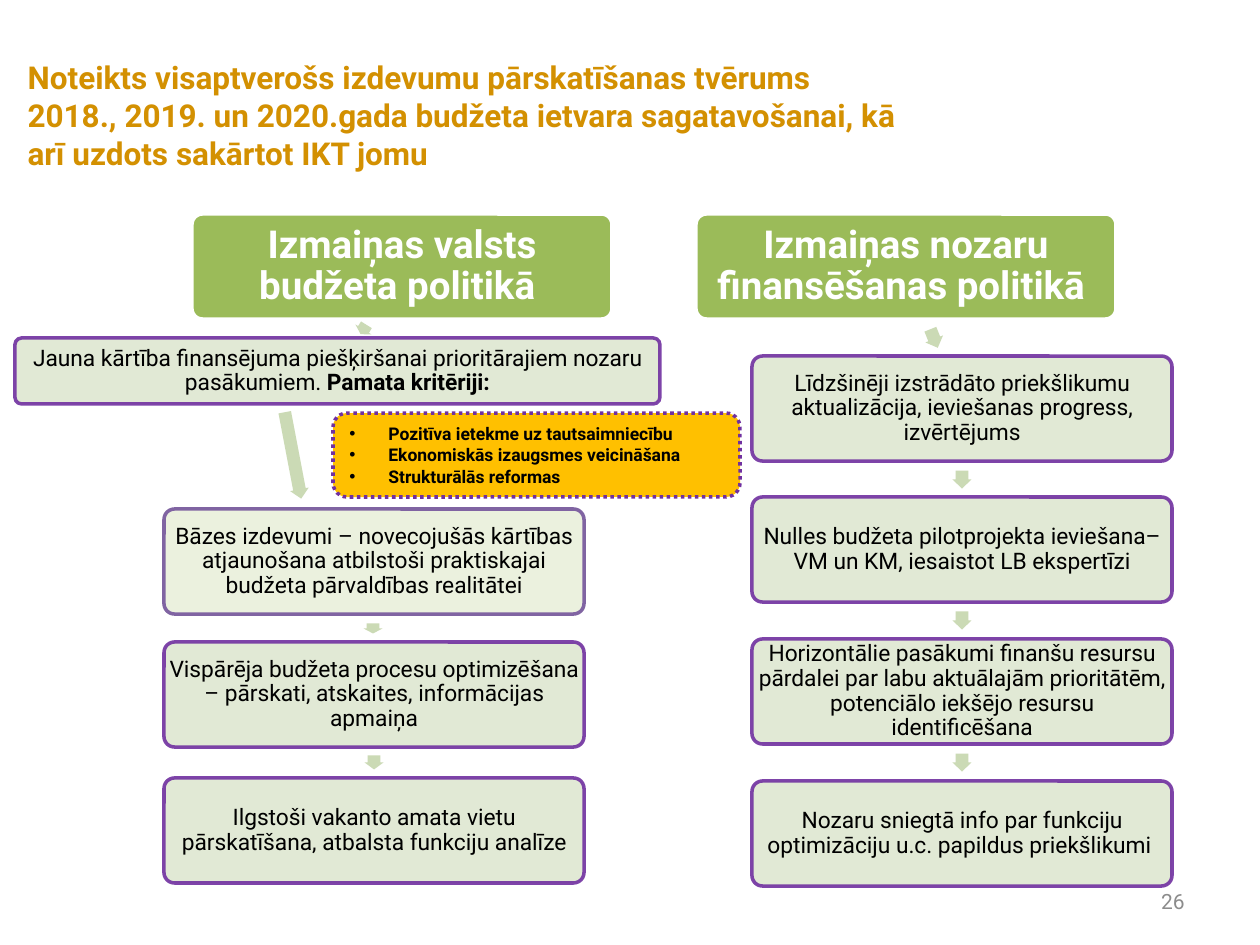
from dataclasses import dataclass
from typing import Any

from lxml import etree
from pptx import Presentation
from pptx import util as u
from pptx.dml.color import RGBColor
from pptx.enum import dml, shapes, text
from pptx.oxml.ns import qn

EMU_PER_PX = 914400 / 126
FONT = "Roboto"
COLORS = {
    "title": "D39001",
    "header": "9BBB59",
    "step": "DEE7D1",
    "base": "EBF1DE",
    "arrow": "CBDAB5",
    "criteria": "FFC000",
    "border": "7030A0",
    "base_border": "8064A2",
    "number": "8C8C8C",
    "white": "FFFFFF",
    "black": "000000",
}
BOX_W, BOX_H = 420, 105
LEFT_X, RIGHT_X = 164, 752
ARROW_H = 19


@dataclass(frozen=True)
class Box:
    x: int
    y: int
    label: str
    w: int = BOX_W
    h: int = BOX_H
    bold_tail: str = ""
    fill: str = "step"
    line: str = "border"
    opacity: int = 90
    size: int = 13
    color: str = "black"
    bold: bool = False
    inset: int = 2


@dataclass(frozen=True)
class Arrow:
    x: int
    y: int
    w: int
    rotation: float = 90


def px(n: float) -> u.Emu:
    return u.Emu(round(n * EMU_PER_PX))


def rgb(name: str) -> RGBColor:
    return RGBColor.from_string(COLORS[name])


def set_attrs(obj: Any, values: dict[str, Any]) -> None:
    for name, value in values.items():
        setattr(obj, name, value)


def place(sp: Any, x: int, y: int, w: int, h: int) -> None:
    set_attrs(sp, {"left": px(x), "top": px(y), "width": px(w), "height": px(h)})


def add_run(p: Any, label: str, size: int, color: str, bold: bool = False) -> None:
    r = p.add_run()
    r.text = label
    set_attrs(r.font, {"name": FONT, "size": u.Pt(size), "bold": bold})
    r.font.color.rgb = rgb(color)


def set_opacity(sp: Any, percent: int) -> None:
    for color in sp._element.spPr.iter(qn("a:srgbClr")):
        etree.SubElement(color, qn("a:alpha"), val=str(percent * 1000))


def add_shape(s: Any, kind: Any, area: tuple[int, int, int, int], fill: str, line: str = "") -> Any:
    sp = s.shapes.add_shape(kind, *map(px, area))
    sp.shadow.inherit = False
    sp.fill.solid()
    sp.fill.fore_color.rgb = rgb(fill)
    if line:
        sp.line.color.rgb = rgb(line)
        sp.line.width = u.Pt(2)
    else:
        sp.line.fill.background()
    return sp


def draw_box(s: Any, box: Box) -> None:
    area = (box.x, box.y, box.w, box.h)
    sp = add_shape(s, shapes.MSO_SHAPE.ROUNDED_RECTANGLE, area, box.fill, box.line)
    sp.adjustments[0] = 0.1
    if box.opacity < 100:
        set_opacity(sp, box.opacity)
    tf = sp.text_frame
    sides = ("left", "right", "top", "bottom")
    set_attrs(tf, {f"margin_{side}": px(box.inset) for side in sides})
    set_attrs(tf, {"word_wrap": True, "vertical_anchor": text.MSO_ANCHOR.MIDDLE})
    p = tf.paragraphs[0]
    set_attrs(p, {"alignment": text.PP_ALIGN.CENTER, "line_spacing": 0.9})
    add_run(p, box.label, box.size, box.color, box.bold)
    if box.bold_tail:
        add_run(p, box.bold_tail, box.size, box.color, True)


def draw_arrow(s: Any, arrow: Arrow) -> None:
    area = (arrow.x, arrow.y, arrow.w, ARROW_H)
    sp = add_shape(s, shapes.MSO_SHAPE.RIGHT_ARROW, area, "arrow")
    sp.adjustments[0] = 0.667
    sp.rotation = arrow.rotation


def draw_criteria(s: Any, items: list[str]) -> None:
    kind = shapes.MSO_SHAPE.ROUNDED_RECTANGLE
    sp = add_shape(s, kind, (333, 413, 407, 84), "criteria", "border")
    sp.line.dash_style = dml.MSO_LINE.ROUND_DOT
    tf = sp.text_frame
    set_attrs(tf, {"word_wrap": True, "vertical_anchor": text.MSO_ANCHOR.MIDDLE})
    for i, item in enumerate(items):
        p = tf.add_paragraph() if i else tf.paragraphs[0]
        p.alignment = text.PP_ALIGN.LEFT
        pPr = p._p.get_or_add_pPr()
        pPr.set("marL", str(px(39)))
        pPr.set("indent", str(px(-39)))
        etree.SubElement(pPr, qn("a:buFont"), typeface="Arial")
        etree.SubElement(pPr, qn("a:buChar"), char="•")
        add_run(p, item, 10, "black", True)


def draw_title(s: Any, label: str) -> None:
    sp = s.shapes.title
    place(sp, 15, 89, 903, 52)
    tf = sp.text_frame
    set_attrs(tf, {"word_wrap": True, "auto_size": text.MSO_AUTO_SIZE.NONE,
                   "vertical_anchor": text.MSO_ANCHOR.MIDDLE})
    p = tf.paragraphs[0]
    p.alignment = text.PP_ALIGN.LEFT
    add_run(p, label, 18, "title", True)


def draw_number(s: Any, label: str) -> None:
    tf = s.shapes.add_textbox(px(903), px(876), px(294), px(50)).text_frame
    set_attrs(tf, {"word_wrap": True, "vertical_anchor": text.MSO_ANCHOR.MIDDLE})
    p = tf.paragraphs[0]
    p.alignment = text.PP_ALIGN.RIGHT
    add_run(p, label, 12, "number")


def right_y(start: int, i: int) -> int:
    return start + i * 425 // 3


HEADER = {"y": 214, "fill": "header", "line": "white", "opacity": 100,
          "size": 22, "color": "white", "bold": True, "inset": 4}
RIGHT_STEPS = [
    "Līdzšinēji izstrādāto priekšlikumu aktualizācija, ieviešanas progress, izvērtējums",
    "Nulles budžeta pilotprojekta ieviešana– VM un KM, iesaistot LB ekspertīzi",
    "Horizontālie pasākumi finanšu resursu pārdalei par labu aktuālajām prioritātēm, "
    "potenciālo iekšējo resursu identificēšana",
    "Nozaru sniegtā info par funkciju optimizāciju u.c. papildus priekšlikumi ",
]
BOXES = [
    Box(x=192, label="Izmaiņas valsts budžeta politikā ", **HEADER),
    Box(15, 338, "Jauna kārtība finansējuma piešķiršanai prioritārajiem nozaru pasākumiem. ",
        w=645, h=66, bold_tail="Pamata kritēriji:"),
    Box(LEFT_X, 509, "Bāzes izdevumi – novecojušās kārtības atjaunošana atbilstoši "
        "praktiskajai budžeta pārvaldības realitātei",
        fill="base", line="base_border", opacity=100),
    Box(LEFT_X, 642, "Vispārēja budžeta procesu optimizēšana – pārskati, atskaites, "
        "informācijas apmaiņa"),
    Box(LEFT_X, 778, "Ilgstoši vakanto amata vietu pārskatīšana, atbalsta funkciju analīze"),
    Box(x=696, label="Izmaiņas nozaru finansēšanas politikā ", **HEADER),
    *(Box(RIGHT_X, right_y(356, i), step) for i, step in enumerate(RIGHT_STEPS)),
]
ARROWS = [
    Arrow(358, 320, 11, 121.9),
    Arrow(249, 446, 88, 79.2),
    Arrow(368, 619, 10),
    Arrow(367, 753, 14),
    Arrow(924, 329, 20, 68.3),
    *(Arrow(953, right_y(470, i), 18) for i in range(len(RIGHT_STEPS) - 1)),
]


def main() -> None:
    prs = Presentation()
    set_attrs(prs, {"slide_width": px(1260), "slide_height": px(945)})
    s = prs.slides.add_slide(prs.slide_layouts[5])
    draw_title(s, "Noteikts visaptverošs izdevumu pārskatīšanas tvērums 2018., 2019. un "
               "2020.gada budžeta ietvara sagatavošanai, kā arī uzdots sakārtot IKT jomu")
    draw_number(s, "26")
    for box in BOXES:
        draw_box(s, box)
    for arrow in ARROWS:
        draw_arrow(s, arrow)
    draw_criteria(s, ["Pozitīva ietekme uz tautsaimniecību",
                      "Ekonomiskās izaugsmes veicināšana", "Strukturālās reformas"])
    prs.save("out.pptx")


if __name__ == "__main__":
    main()
